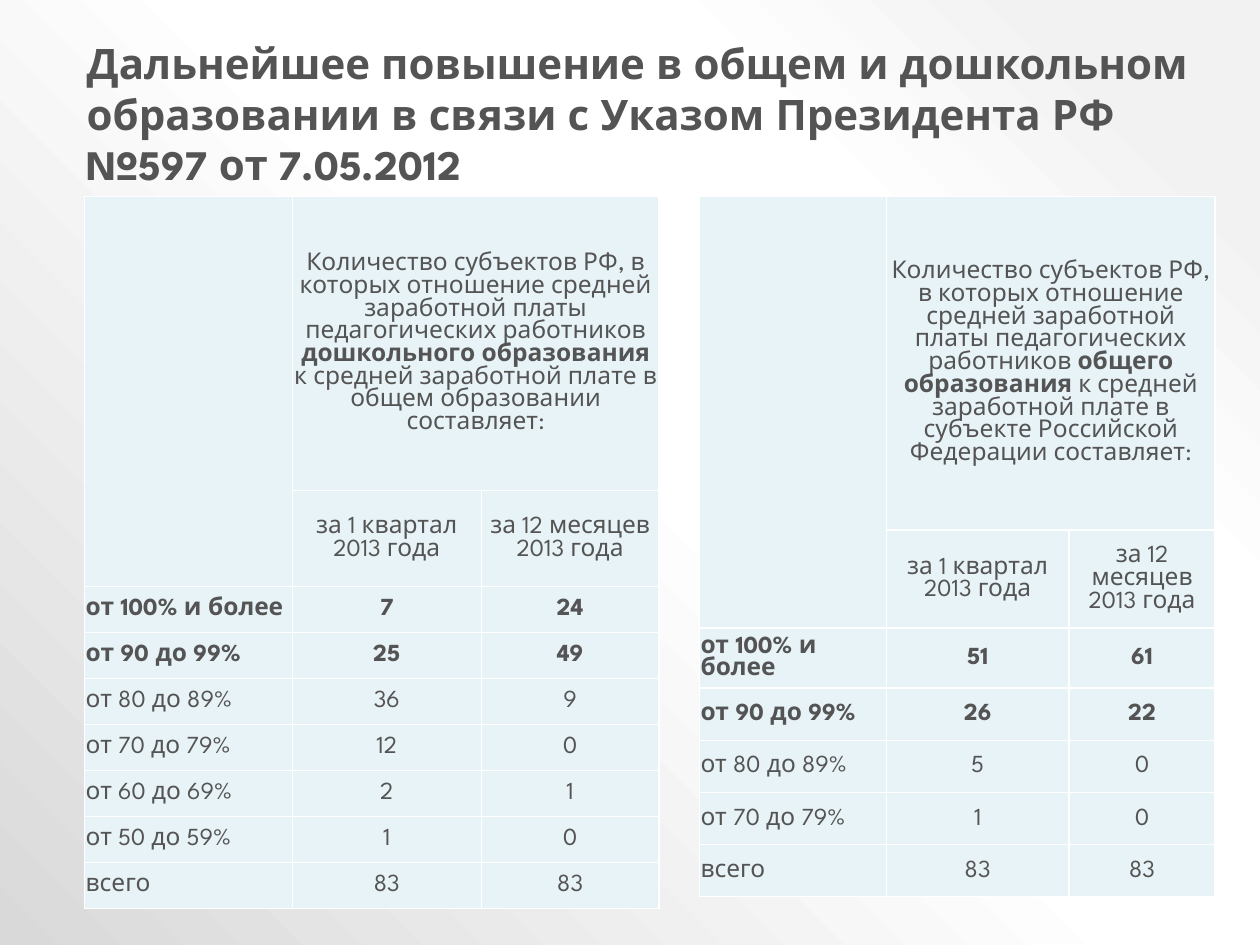
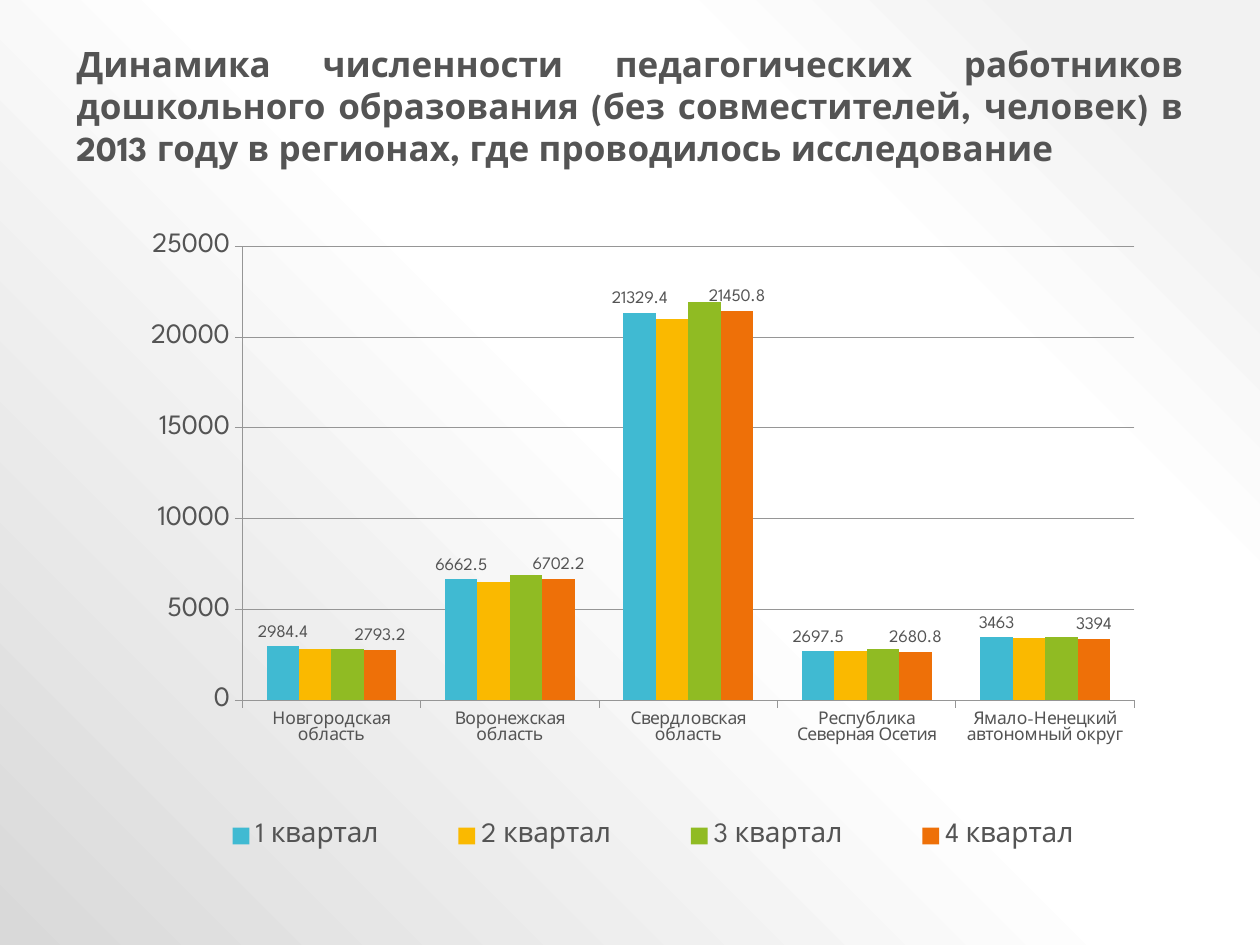
"""Builds two slides on teachers' pay and staffing in schools and preschools."""
from dataclasses import dataclass, field
from typing import Any, NamedTuple

from pptx import Presentation
from pptx import util as u
from pptx.chart.data import CategoryChartData
from pptx.dml.color import RGBColor
from pptx.enum import chart as ch
from pptx.enum import text
from pptx.oxml import ns, parse_xml

WIDTH, HEIGHT = u.Inches(10), u.Inches(7.5)
COLUMNS, ROWS = 100, 75


@dataclass(frozen=True)
class Theme:
    """Colours, font and type sizes of the slides."""
    font: str = "League Spartan"
    ink: str = "545454"
    cell: str = "E8F3F7"
    border: str = "FFFFFF"
    grid: str = "969696"
    series: tuple[str, ...] = ("40BAD2", "FAB900", "90BB23", "EE7008")
    stops: tuple[tuple[int, str], ...] = (
        (10, "F2F2F2"), (28, "FFFFFF"), (48, "FFFFFF"), (100, "D9D9D9"))
    table_size: int = 14
    chart_size: int = 10
    axis_size: int = 16


class Box(NamedTuple):
    """A frame in grid columns and rows."""
    x: float
    y: float
    w: float
    h: float


class Title(NamedTuple):
    """A slide heading."""
    box: Box
    words: str
    size: int
    align: Any


@dataclass(frozen=True)
class PayTable:
    """A table of regions counted by pay ratio."""
    box: Box
    widths: tuple[float, ...]
    header_heights: tuple[float, float]
    body_heights: tuple[float, ...]
    heading: tuple[str, str, str]
    body: tuple[tuple[str, int, int], ...]
    periods: tuple[str, str] = ("за 1 квартал 2013 года", "за 12 месяцев 2013 года")
    bold_rows: int = 2


@dataclass(frozen=True)
class StaffChart:
    """A column chart of staff numbers by quarter."""
    box: Box
    regions: tuple[str, ...]
    quarters: dict[str, tuple[float, ...]]
    labelled: tuple[int, ...] = (0, 3)
    plot: Box = field(default=Box(0.138, 0.051, 0.833, 0.67))
    legend: Box = field(default=Box(0.063, 0.866, 0.917, 0.11))


THEME = Theme()

COUNT_INTRO = ("Количество субъектов РФ, в которых отношение средней заработной платы "
               "педагогических работников ")

PAY_TITLE = Title(
    Box(5.9, 2.5, 90.6, 13.1),
    "Дальнейшее повышение в общем и дошкольном образовании в связи с Указом "
    "Президента РФ №597 от 7.05.2012", 24, text.PP_ALIGN.LEFT)

PAY_TABLES = (
    PayTable(
        Box(6.7, 15.6, 45.6, 56.5), (16.5, 15, 14.1), (23.35, 7.6), (3.65,) * 7,
        (COUNT_INTRO, "дошкольного образования ",
         "к средней заработной плате в общем образовании составляет:"),
        (("от 100% и более", 7, 24), ("от 90 до 99%", 25, 49), ("от 80 до 89%", 36, 9),
         ("от 70 до 79%", 12, 0), ("от 60 до 69%", 2, 1), ("от 50 до 59%", 1, 0),
         ("всего", 83, 83))),
    PayTable(
        Box(55.5, 15.6, 40.9, 55.5), (14.85, 14.5, 11.6), (26.45, 7.8),
        (4.75,) + (4.14,) * 4,
        (COUNT_INTRO, "общего образования",
         " к средней заработной плате в субъекте Российской Федерации составляет:"),
        (("от 100% и более", 51, 61), ("от 90 до 99%", 26, 22), ("от 80 до 89%", 5, 0),
         ("от 70 до 79%", 1, 0), ("всего", 83, 83))),
)

STAFF_TITLE = Title(
    Box(5.1, 2.9, 89.8, 11.1),
    "Динамика численности педагогических работников дошкольного образования "
    "(без совместителей, человек) в 2013 году в регионах, где проводилось исследование",
    20, text.PP_ALIGN.JUSTIFY)

STAFF_CHART = StaffChart(
    Box(7.5, 16.8, 85, 53.8),
    ("Новгородская область", "Воронежская область", "Свердловская область",
     "Республика Северная Осетия", "Ямало-Ненецкий автономный округ"),
    {"1 квартал": (2984.4, 6662.5, 21329.4, 2697.5, 3463),
     "2 квартал": (2800, 6500, 21000, 2700, 3400),
     "3 квартал": (2800, 6900, 21900, 2800, 3500),
     "4 квартал": (2793.2, 6702.2, 21450.8, 2680.8, 3394)})


def across(n: float) -> int:
    """Return the width of n grid columns."""
    return round(WIDTH * n / COLUMNS)


def down(n: float) -> int:
    """Return the height of n grid rows."""
    return round(HEIGHT * n / ROWS)


def frame(box: Box) -> tuple[int, int, int, int]:
    """Return a grid box as slide lengths."""
    return across(box.x), down(box.y), across(box.w), down(box.h)


def apply(target: Any, values: dict[str, Any]) -> None:
    """Set each named value on the target."""
    for name, value in values.items():
        setattr(target, name, value)


def style_font(font: Any, size: float, bold: bool = False) -> None:
    """Give a font the theme's face and ink."""
    apply(font, {"name": THEME.font, "size": u.Pt(size), "bold": bold})
    font.color.rgb = RGBColor.from_string(THEME.ink)


def write(tf: Any, parts: list[tuple[str, bool]], size: int, align: Any) -> None:
    """Write one paragraph of plain and bold parts."""
    p = tf.paragraphs[0]
    p.alignment = align
    for words, bold in parts:
        r = p.add_run()
        r.text = words
        style_font(r.font, size, bold)


def paint_background(prs: Any) -> None:
    """Put the shared gradient on the slide master."""
    c_sld = prs.slide_master.element.cSld
    for old in c_sld.findall(ns.qn("p:bg")):
        c_sld.remove(old)
    stops = "".join(f'<a:gs pos="{at * 1000}"><a:srgbClr val="{c}"/></a:gs>'
                    for at, c in THEME.stops)
    c_sld.insert(0, parse_xml(
        f'<p:bg {ns.nsdecls("p", "a")}><p:bgPr><a:gradFill rotWithShape="1">'
        f'<a:gsLst>{stops}</a:gsLst><a:path path="circle">'
        '<a:fillToRect l="100000" b="100000"/></a:path></a:gradFill>'
        '<a:effectLst/></p:bgPr></p:bg>'))


def add_title(s: Any, title: Title) -> None:
    """Draw a slide heading."""
    tf = s.shapes.add_textbox(*frame(title.box)).text_frame
    apply(tf, {"word_wrap": True, "auto_size": text.MSO_AUTO_SIZE.SHAPE_TO_FIT_TEXT})
    write(tf, [(title.words, True)], title.size, title.align)


def style_cell(cell: Any) -> None:
    """Fill, inset and outline a table cell."""
    inset = across(0.1)
    apply(cell, {"margin_left": inset, "margin_right": inset, "margin_top": inset,
                 "margin_bottom": 0, "vertical_anchor": text.MSO_ANCHOR.MIDDLE})
    tc_pr = cell._tc.get_or_add_tcPr()
    for side in ("lnL", "lnR", "lnT", "lnB"):
        tc_pr.append(parse_xml(
            f'<a:{side} {ns.nsdecls("a")} w="{u.Pt(1)}"><a:solidFill>'
            f'<a:srgbClr val="{THEME.border}"/></a:solidFill></a:{side}>'))
    cell.fill.solid()
    cell.fill.fore_color.rgb = RGBColor.from_string(THEME.cell)


def add_pay_table(s: Any, spec: PayTable) -> None:
    """Draw a table with a two-row heading."""
    heights = spec.header_heights + spec.body_heights
    table = s.shapes.add_table(len(heights), len(spec.widths), *frame(spec.box)).table
    apply(table, {"first_row": False, "horz_banding": False})
    for column, width in zip(table.columns, spec.widths):
        column.width = across(width)
    for row, height in zip(table.rows, heights):
        row.height = down(height)
    for cell in table.iter_cells():
        style_cell(cell)
    table.cell(0, 0).merge(table.cell(1, 0))
    table.cell(0, 1).merge(table.cell(0, 2))

    center = text.PP_ALIGN.CENTER
    heading = list(zip(spec.heading, (False, True, False)))
    entries = [(0, 1, heading, center)]
    entries += [(1, c, [(words, False)], center) for c, words in enumerate(spec.periods, 1)]
    entries += [(r + 2, c, [(str(value), r < spec.bold_rows)],
                 center if c else text.PP_ALIGN.LEFT)
                for r, line in enumerate(spec.body) for c, value in enumerate(line)]
    for r, c, parts, align in entries:
        write(table.cell(r, c).text_frame, parts, THEME.table_size, align)


def place(element: Any, box: Box, inner: bool = False) -> None:
    """Fix a chart part at shares of the chart's size."""
    for old in element.findall(ns.qn("c:layout")):
        element.remove(old)
    target = '<c:layoutTarget val="inner"/>' if inner else ""
    modes = "".join(f'<c:{k}Mode val="edge"/>' for k in "xy")
    sizes = "".join(f'<c:{k} val="{v}"/>' for k, v in box._asdict().items())
    layout = parse_xml(f'<c:layout {ns.nsdecls("c")}><c:manualLayout>{target}{modes}'
                       f'{sizes}</c:manualLayout></c:layout>')
    before = element.find(ns.qn("c:legendPos"))
    element.insert(0 if before is None else element.index(before) + 1, layout)


def add_staff_chart(s: Any, spec: StaffChart) -> None:
    """Draw the clustered columns with axes and legend."""
    data = CategoryChartData()
    data.categories = spec.regions
    for name, values in spec.quarters.items():
        data.add_series(name, values)
    chart = s.shapes.add_chart(ch.XL_CHART_TYPE.COLUMN_CLUSTERED, *frame(spec.box),
                               data).chart
    apply(chart, {"has_legend": True, "has_title": False})
    style_font(chart.font, THEME.chart_size)
    apply(chart.legend, {"position": ch.XL_LEGEND_POSITION.RIGHT,
                         "include_in_layout": False})
    style_font(chart.legend.font, THEME.axis_size)
    place(chart.legend._element, spec.legend)

    plot = chart.plots[0]
    apply(plot, {"gap_width": 150, "overlap": 0, "vary_by_categories": False})
    place(chart._chartSpace.chart.plotArea, spec.plot, inner=True)
    for i, (series, color) in enumerate(zip(plot.series, THEME.series)):
        series.format.fill.solid()
        series.format.fill.fore_color.rgb = RGBColor.from_string(color)
        if i in spec.labelled:
            labels = series.data_labels
            apply(labels, {"show_value": True,
                           "position": ch.XL_LABEL_POSITION.OUTSIDE_END})
            style_font(labels.font, THEME.chart_size)

    axes = ((chart.category_axis, THEME.chart_size), (chart.value_axis, THEME.axis_size))
    for axis, size in axes:
        axis.major_tick_mark = ch.XL_TICK_MARK.OUTSIDE
        style_font(axis.tick_labels.font, size)
    apply(chart.value_axis, {"minimum_scale": 0, "maximum_scale": 25000,
                             "major_unit": 5000, "has_major_gridlines": True})
    for part in (chart.category_axis, chart.value_axis, chart.value_axis.major_gridlines):
        part.format.line.width = u.Pt(0.5)
        part.format.line.color.rgb = RGBColor.from_string(THEME.grid)


def main() -> None:
    """Build and save the presentation."""
    prs = Presentation()
    apply(prs, {"slide_width": WIDTH, "slide_height": HEIGHT})
    paint_background(prs)
    blank = prs.slide_layouts[6]

    s = prs.slides.add_slide(blank)
    add_title(s, PAY_TITLE)
    for spec in PAY_TABLES:
        add_pay_table(s, spec)

    s = prs.slides.add_slide(blank)
    add_title(s, STAFF_TITLE)
    add_staff_chart(s, STAFF_CHART)
    prs.save("out.pptx")


if __name__ == "__main__":
    main()
